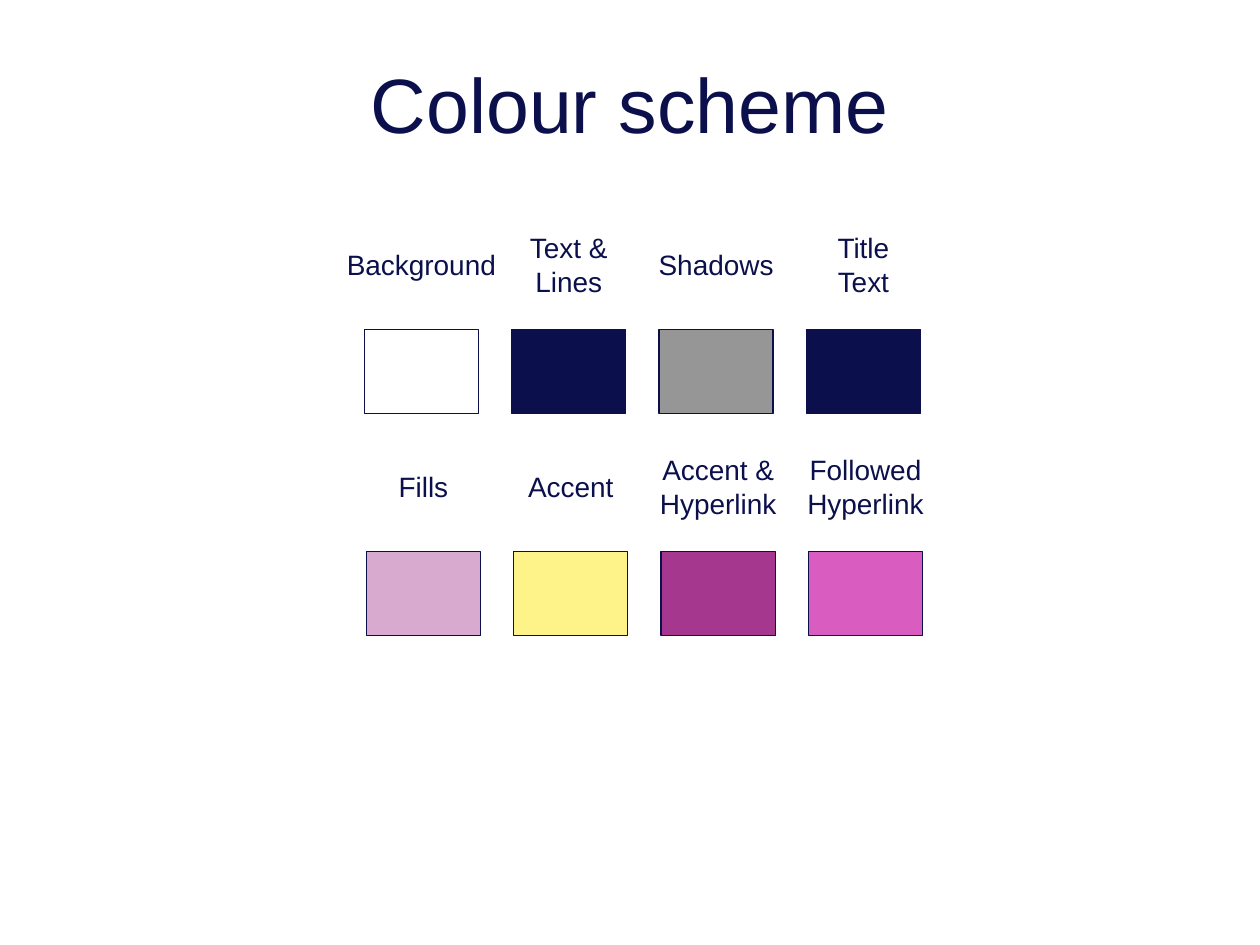
"""Build the colour scheme slide: two rows of labelled swatches."""
from pptx import Presentation
from pptx.dml.color import RGBColor
from pptx.enum.shapes import MSO_SHAPE as Shape
from pptx.enum.text import MSO_ANCHOR as Anchor, MSO_AUTO_SIZE as AutoSize, PP_ALIGN as Align
from pptx.oxml.ns import qn
from pptx.util import Pt
from lxml.etree import SubElement

TITLE = "Colour scheme"
NAVY, WHITE = "0B104D", "FFFFFF"
ROWS = [
    {"left": 208.2, "top": 188.2, "swatches": [
        ("Background", 101, WHITE),
        ("Text &\nLines", 62, NAVY),
        ("Shadows", 82, "969696"),
        ("Title\vText", 47, NAVY),
    ]},
    {"left": 209.4, "top": 315.2, "swatches": [
        ("Fills", 45, "D9AACF"),
        ("Accent", 65, "FEF388"),
        ("Accent &\nHyperlink", 83, "A5378F"),
        ("Followed\nHyperlink", 83, "D95DC1"),
    ]},
]
SWATCH_WIDTH, SWATCH_HEIGHT, PITCH = 65.2, 48, 84.2
LABEL_RISE, LINE_HEIGHT, LABEL_PADDING = 37, 19.4, 7.2


def paint(colour_format, colour):
    colour_format.rgb = RGBColor.from_string(colour)


def write(frame, text, size):
    frame.text = text
    for paragraph in frame.paragraphs:
        paragraph.alignment = Align.CENTER
        for run in paragraph.runs:
            run.font.name, run.font.size = "Arial", Pt(size)
            paint(run.font.color, NAVY)


def add_title(slide):
    title = slide.shapes.title
    title.left, title.top, title.width, title.height = Pt(54), Pt(13.7), Pt(612), Pt(90)
    title.fill.solid()
    paint(title.fill.fore_color, WHITE)
    white = title.fill._xPr.find(qn("a:solidFill"))[0]
    SubElement(white, qn("a:alpha")).set("val", "50000")
    title.text_frame.vertical_anchor = Anchor.MIDDLE
    write(title.text_frame, TITLE, 44)


def add_swatch(slide, left, top, colour):
    swatch = slide.shapes.add_shape(
        Shape.RECTANGLE, Pt(left), Pt(top), Pt(SWATCH_WIDTH), Pt(SWATCH_HEIGHT))
    swatch.shadow.inherit = False
    swatch.fill.solid()
    paint(swatch.fill.fore_color, colour)
    paint(swatch.line.color, NAVY)
    swatch.line.width = Pt(0.75)


def add_label(slide, centre, middle, width, text):
    height = LABEL_PADDING + LINE_HEIGHT * len(text.splitlines())
    label = slide.shapes.add_textbox(
        Pt(centre - width / 2), Pt(middle - height / 2), Pt(width), Pt(height))
    label.text_frame.word_wrap = False
    label.text_frame.auto_size = AutoSize.SHAPE_TO_FIT_TEXT
    write(label.text_frame, text, 16)


def main():
    deck = Presentation()
    deck.slide_width, deck.slide_height = Pt(720), Pt(540)
    slide = deck.slides.add_slide(deck.slide_layouts[5])
    slide.background.fill.solid()
    paint(slide.background.fill.fore_color, WHITE)
    add_title(slide)
    for row in ROWS:
        for column, (text, width, colour) in enumerate(row["swatches"]):
            left = row["left"] + column * PITCH
            add_swatch(slide, left, row["top"], colour)
            add_label(slide, left + SWATCH_WIDTH / 2, row["top"] - LABEL_RISE, width, text)
    deck.save("out.pptx")


if __name__ == "__main__":
    main()
